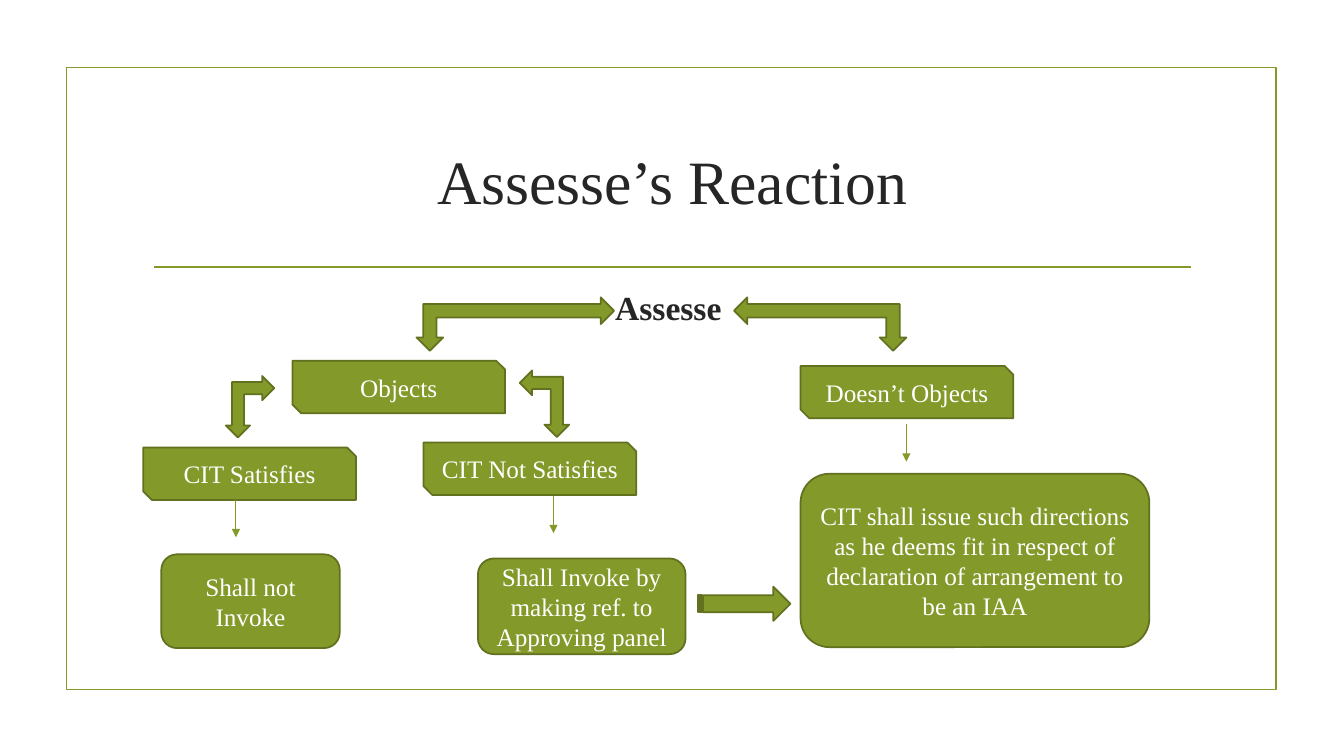
"""Builds the flow chart slide on the assesse's reaction."""
from lxml import etree
from pptx import Presentation
from pptx import util as u
from pptx.dml.color import RGBColor
from pptx.enum import shapes, text
from pptx.oxml.ns import qn

OLIVE = RGBColor(0x83, 0x99, 0x2A)
DARK_OLIVE = RGBColor(0x61, 0x71, 0x1F)
INK = RGBColor(0x26, 0x26, 0x26)
WHITE = RGBColor(0xFF, 0xFF, 0xFF)

KIND = shapes.MSO_SHAPE
STEP_SIZE = (2.11, 0.52)
TITLE_FONT = {"size": u.Pt(44), "bold": False}
ROOT_FONT = {"size": u.Pt(24), "bold": True}
STEP_FONT = {"size": u.Pt(18), "bold": False}

STEPS = [
    ("Objects", 2.9, 3.58),
    ("CIT Satisfies", 1.42, 4.44),
    ("CIT Not Satisfies", 4.2, 4.39),
    ("Doesn’t Objects", 7.94, 3.63),
]
OUTCOMES = [
    ("CIT shall issue such directions as he deems fit in respect of "
     "declaration of arrangement to be an IAA", (7.94, 4.7, 3.46, 1.72)),
    ("Shall not Invoke", (1.6, 5.5, 1.77, 0.93)),
    ("Shall Invoke by making ref. to Approving panel", (4.74, 5.54, 2.06, 0.95)),
]
BRANCHES = [
    ((4.13, 2.95, 1.96, 0.53), 180),
    ((7.87, 2.36, 0.53, 1.71), 270),
    ((2.24, 3.73, 0.48, 0.61), 180),
    ((5.07, 3.76, 0.66, 0.49), 270),
]
DROPS = [(8.99, 4.21), (2.34, 4.96), (5.49, 4.92)]
DROP_LENGTH = 0.37


def inches(values):
    return [u.Inches(value) for value in values]


def write(holder, wording, font, colour, anchor=text.MSO_ANCHOR.MIDDLE):
    frame = holder.text_frame
    frame.word_wrap = True
    frame.vertical_anchor = anchor
    paragraph = frame.paragraphs[0]
    paragraph.alignment = text.PP_ALIGN.CENTER
    run = paragraph.add_run()
    run.text = wording
    for attribute, value in {"name": "Times New Roman", **font}.items():
        setattr(run.font, attribute, value)
    run.font.color.rgb = colour


def add_block(slide, kind, place, wording="", rotation=0):
    block = slide.shapes.add_shape(kind, *inches(place))
    block.rotation = rotation
    block.shadow.inherit = False
    block.fill.solid()
    block.fill.fore_color.rgb = OLIVE
    block.line.color.rgb = DARK_OLIVE
    block.line.width = u.Pt(1.25)
    if wording:
        write(block, wording, STEP_FONT, WHITE)


def add_line(slide, ends, width, arrow=False):
    line = slide.shapes.add_connector(shapes.MSO_CONNECTOR.STRAIGHT, *inches(ends))
    line.line.color.rgb = OLIVE
    line.line.width = u.Pt(width)
    if arrow:
        etree.SubElement(line.line._get_or_add_ln(), qn("a:tailEnd"), type="triangle")
    etree.SubElement(line._element.spPr, qn("a:effectLst"))


def add_frame(slide):
    frame = slide.shapes.add_shape(KIND.RECTANGLE, *inches((0.66, 0.67, 12, 6.17)))
    frame.shadow.inherit = False
    frame.fill.background()
    frame.line.color.rgb = OLIVE
    frame.line.width = u.Pt(1.25)


def add_title(slide, wording):
    title = slide.shapes.title
    title.left, title.top, title.width, title.height = inches((1.42, 1.07, 10.5, 1.43))
    write(title, wording, TITLE_FONT, INK)


def add_root(slide, wording):
    root = slide.shapes.add_textbox(*inches((1.42, 2.8, 10.5, 0.6)))
    write(root, wording, ROOT_FONT, INK, text.MSO_ANCHOR.TOP)


def main():
    deck = Presentation()
    deck.slide_width, deck.slide_height = inches((13.33, 7.5))
    slide = deck.slides.add_slide(deck.slide_layouts[5])
    add_frame(slide)
    add_line(slide, (1.53, 2.65, 11.81, 2.65), 1.25)
    add_title(slide, "Assesse’s Reaction")
    add_root(slide, "Assesse ")
    for place, rotation in BRANCHES:
        add_block(slide, KIND.LEFT_UP_ARROW, place, rotation=rotation)
    for wording, left, top in STEPS:
        add_block(slide, KIND.SNIP_2_DIAG_RECTANGLE, (left, top, *STEP_SIZE), wording)
    for wording, place in OUTCOMES:
        add_block(slide, KIND.ROUNDED_RECTANGLE, place, wording)
    for x, top in DROPS:
        add_line(slide, (x, top, x, top + DROP_LENGTH), 0.75, arrow=True)
    add_block(slide, KIND.STRIPED_RIGHT_ARROW, (6.92, 5.82, 0.92, 0.34))
    deck.save("out.pptx")


if __name__ == "__main__":
    main()
